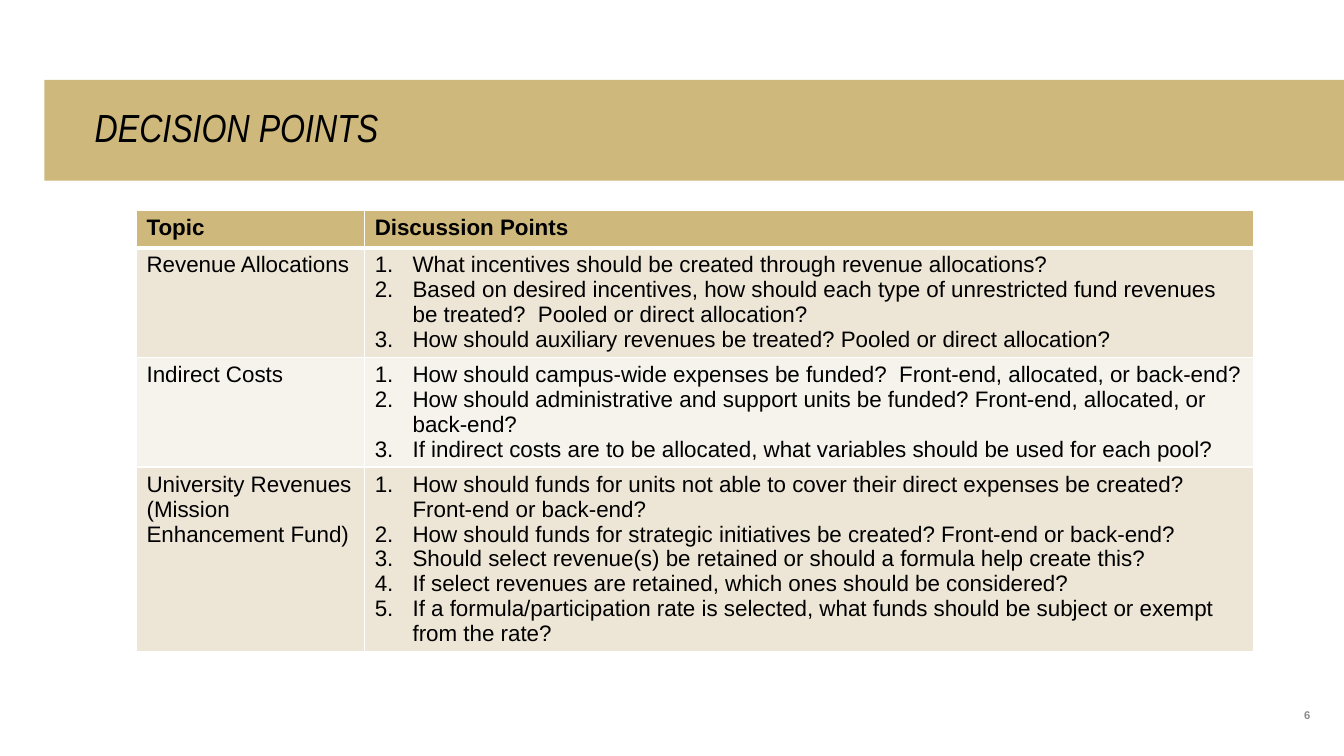
import dataclasses

import lxml.etree
import pptx
import pptx.dml.color
import pptx.enum.shapes
import pptx.enum.text
import pptx.oxml.ns
import pptx.util

Pt = pptx.util.Pt
qn = pptx.oxml.ns.qn
ANCHOR = pptx.enum.text.MSO_ANCHOR
ALIGN = pptx.enum.text.PP_ALIGN


def rgb(value):
    return pptx.dml.color.RGBColor.from_string(value)


@dataclasses.dataclass
class Theme:
    gold: str = "CFB87C"
    sand: str = "EDE6D7"
    ivory: str = "F6F3EC"
    black: str = "000000"
    gray: str = "8C8C8C"
    white: str = "FFFFFF"
    body_font: str = "Arial"
    title_font: str = "Arial Narrow"
    title_size: int = 28
    table_size: int = 16
    number_size: int = 8


theme = Theme()
NUMBER_INDENT = Pt(27)

HEADER = ("Topic", ["Discussion Points"])
TOPICS = [
    ("Revenue Allocations", [
        "What incentives should be created through revenue allocations?",
        "Based on desired incentives, how should each type of unrestricted fund "
        "revenues be treated?  Pooled or direct allocation?",
        "How should auxiliary revenues be treated? Pooled or direct allocation?",
    ]),
    ("Indirect Costs", [
        "How should campus-wide expenses be funded?  Front-end, allocated, or back-end?",
        "How should administrative and support units be funded? Front-end, allocated, "
        "or back-end?",
        "If indirect costs are to be allocated, what variables should be used for each pool?",
    ]),
    ("University Revenues (Mission Enhancement Fund)", [
        "How should funds for units not able to cover their direct expenses be created?  "
        "Front-end or back-end?",
        "How should funds for strategic initiatives be created? Front-end or back-end?",
        "Should select revenue(s) be retained or should a formula help create this?",
        "If select revenues are retained, which ones should be considered?",
        "If a formula/participation rate is selected, what funds should be subject or "
        "exempt from the rate?",
    ]),
]

presentation = pptx.Presentation()
presentation.slide_width = Pt(960)
presentation.slide_height = Pt(540)
slide = presentation.slides.add_slide(presentation.slide_layouts[6])

# Title banner
banner = slide.shapes.add_shape(
    pptx.enum.shapes.MSO_SHAPE.RECTANGLE, Pt(31.7), Pt(57), Pt(928.3), Pt(72))
banner.shadow.inherit = False
banner.fill.solid()
banner.fill.fore_color.rgb = rgb(theme.gold)
banner.line.fill.background()
title_frame = banner.text_frame
title_frame.word_wrap = True
title_frame.vertical_anchor = ANCHOR.MIDDLE
title_frame.margin_left, title_frame.margin_right = Pt(36), Pt(72)
title_frame.text = "DECISION POINTS"
title = title_frame.paragraphs[0]
title.alignment = ALIGN.LEFT
title.line_spacing = 0.9
title_font = title.runs[0].font
title_font.name = theme.title_font
title_font.size = Pt(theme.title_size)
title_font.italic = True
title_font.color.rgb = rgb(theme.black)

# Decision table
column_widths = [163, 635]
row_heights = [27, 75.6, 75.6, 103]
table = slide.shapes.add_table(
    len(row_heights), len(column_widths), Pt(97.5), Pt(150),
    Pt(sum(column_widths)), Pt(sum(row_heights))).table
table.horz_banding = False
for column, width in zip(table.columns, column_widths):
    column.width = Pt(width)
for row, height in zip(table.rows, row_heights):
    row.height = Pt(height)

row_fills = [theme.gold, theme.sand, theme.ivory, theme.sand]
for row_index, (topic, points) in enumerate([HEADER, *TOPICS]):
    is_header = row_index == 0
    for column_index, lines in enumerate([[topic], points]):
        cell = table.cell(row_index, column_index)
        cell_properties = cell._tc.get_or_add_tcPr()
        for side in ("L", "R", "T", "B"):
            thick = (is_header and side == "B") or (row_index == 1 and side == "T")
            border = lxml.etree.SubElement(
                cell_properties, qn(f"a:ln{side}"), w=str(Pt(3 if thick else 1)))
            border_fill = lxml.etree.SubElement(border, qn("a:solidFill"))
            lxml.etree.SubElement(border_fill, qn("a:srgbClr"), val=theme.white)
        cell.fill.solid()
        cell.fill.fore_color.rgb = rgb(row_fills[row_index])
        cell.text_frame.text = "\n".join(lines)
        for paragraph in cell.text_frame.paragraphs:
            if column_index == 1 and not is_header:
                properties = paragraph._p.get_or_add_pPr()
                properties.set("marL", str(NUMBER_INDENT))
                properties.set("indent", str(-NUMBER_INDENT))
                lxml.etree.SubElement(properties, qn("a:buFont"), typeface="+mj-lt")
                lxml.etree.SubElement(properties, qn("a:buAutoNum"), type="arabicPeriod")
            font = paragraph.runs[0].font
            font.name = theme.body_font
            font.size = Pt(theme.table_size)
            font.bold = is_header
            font.color.rgb = rgb(theme.black)

# Slide number
number_box = slide.shapes.add_textbox(Pt(874.8), Pt(479.5), Pt(61.2), Pt(36))
number_frame = number_box.text_frame
number_frame.word_wrap = True
number_frame.vertical_anchor = ANCHOR.BOTTOM
number_frame.margin_left = number_frame.margin_right = 0
number_frame.margin_top = number_frame.margin_bottom = 0
number_frame.text = "6"
number = number_frame.paragraphs[0]
number.alignment = ALIGN.RIGHT
number_font = number.runs[0].font
number_font.name = theme.body_font
number_font.size = Pt(theme.number_size)
number_font.bold = True
number_font.color.rgb = rgb(theme.gray)

presentation.save("out.pptx")
